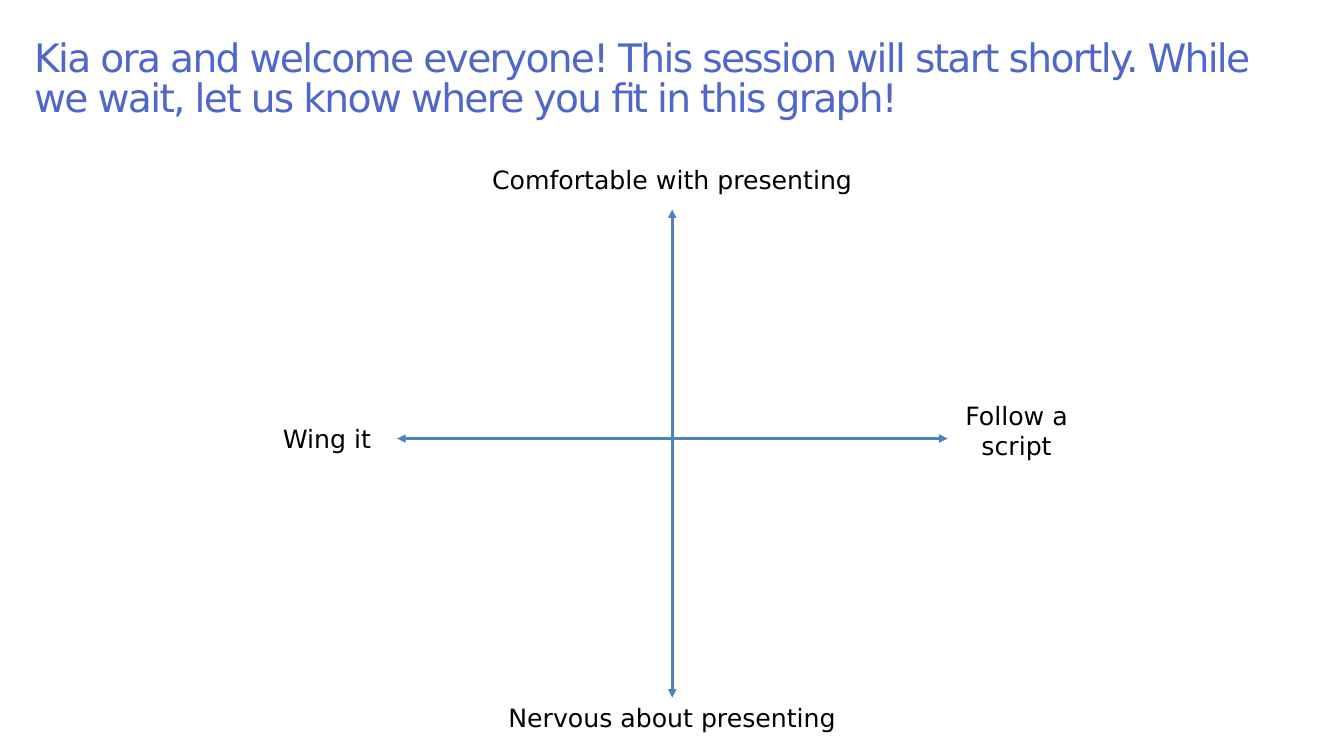
from lxml import etree
from pptx import Presentation
from pptx.dml.color import RGBColor
from pptx.enum.shapes import MSO_CONNECTOR
from pptx.enum.text import MSO_ANCHOR, MSO_AUTO_SIZE, PP_ALIGN
from pptx.oxml.ns import qn
from pptx.util import Cm, Pt

STRAIGHT = MSO_CONNECTOR.STRAIGHT
TOP, MIDDLE = MSO_ANCHOR.TOP, MSO_ANCHOR.MIDDLE
LEFT, CENTER = PP_ALIGN.LEFT, PP_ALIGN.CENTER
NO_AUTOFIT = MSO_AUTO_SIZE.NONE

FONT = "DejaVu Sans"
COLORS = {"title": "4E67C8", "label": "000000", "axis": "4F81BD"}
TITLE = ("Kia ora and welcome everyone! This session will start shortly. "
         "While we wait, let us know where you fit in this graph!")

# Lengths in centimetres
SLIDE_WIDTH, SLIDE_HEIGHT = 33.87, 19.05
TITLE_BOX = (0.61, 0.33, 32.66, 3.38)
CENTER_X, CENTER_Y = 16.94, 11.05
AXIS_LEFT, AXIS_RIGHT = 10.01, 23.88
AXIS_TOP, AXIS_BOTTOM = 5.28, 17.58
SIDE_WIDTH, SIDE_HEIGHT, SIDE_TOP = 3.48, 2.16, 9.96
END_HEIGHT = 1.27
TOP_WIDTH, BOTTOM_WIDTH = 12.75, 11.0

LABELS = [
    ("Wing it", (6.5, SIDE_TOP, SIDE_WIDTH, SIDE_HEIGHT), MIDDLE),
    ("Follow a script", (AXIS_RIGHT, SIDE_TOP, SIDE_WIDTH, SIDE_HEIGHT), TOP),
    ("Comfortable with presenting",
     (CENTER_X - TOP_WIDTH / 2, AXIS_TOP - END_HEIGHT, TOP_WIDTH, END_HEIGHT), TOP),
    ("Nervous about presenting",
     (CENTER_X - BOTTOM_WIDTH / 2, AXIS_BOTTOM, BOTTOM_WIDTH, END_HEIGHT), TOP),
]
AXES = [
    (CENTER_X, AXIS_TOP, CENTER_X, AXIS_BOTTOM),
    (AXIS_LEFT, CENTER_Y, AXIS_RIGHT, CENTER_Y),
]


def write_text(shape, text, size, color, alignment, anchor, vertical_inset):
    frame = shape.text_frame
    frame.word_wrap = True
    frame.auto_size = NO_AUTOFIT
    frame.vertical_anchor = anchor
    frame.margin_left = frame.margin_right = Cm(0.25)
    frame.margin_top = frame.margin_bottom = Cm(vertical_inset)
    paragraph = frame.paragraphs[0]
    paragraph.alignment = alignment
    run = paragraph.add_run()
    run.text = text
    run.font.name = FONT
    run.font.size = Pt(size)
    run.font.color.rgb = RGBColor.from_string(COLORS[color])
    return paragraph, run


def add_title(slide):
    title = slide.shapes.title
    title.left, title.top, title.width, title.height = map(Cm, TITLE_BOX)
    paragraph, run = write_text(title, TITLE, 28, "title", LEFT, MIDDLE, 0.25)
    paragraph.line_spacing = 0.85
    run.font._element.set("spc", "-120")


def add_label(slide, text, box, anchor):
    label = slide.shapes.add_textbox(*map(Cm, box))
    write_text(label, text, 18, "label", CENTER, anchor, 0.13)


def add_axis(slide, ends):
    axis = slide.shapes.add_connector(STRAIGHT, *map(Cm, ends))
    axis.line.color.rgb = RGBColor.from_string(COLORS["axis"])
    axis.line.width = Pt(2)
    line = axis.line._get_or_add_ln()
    for arrowhead in ("a:headEnd", "a:tailEnd"):
        etree.SubElement(line, qn(arrowhead), type="triangle")
    etree.SubElement(axis._element.spPr, qn("a:effectLst"))


def main():
    presentation = Presentation()
    presentation.slide_width = Cm(SLIDE_WIDTH)
    presentation.slide_height = Cm(SLIDE_HEIGHT)
    title_only = presentation.slide_layouts[5]
    slide = presentation.slides.add_slide(title_only)
    add_title(slide)
    for text, box, anchor in LABELS:
        add_label(slide, text, box, anchor)
    for ends in AXES:
        add_axis(slide, ends)
    presentation.save("out.pptx")


if __name__ == "__main__":
    main()
